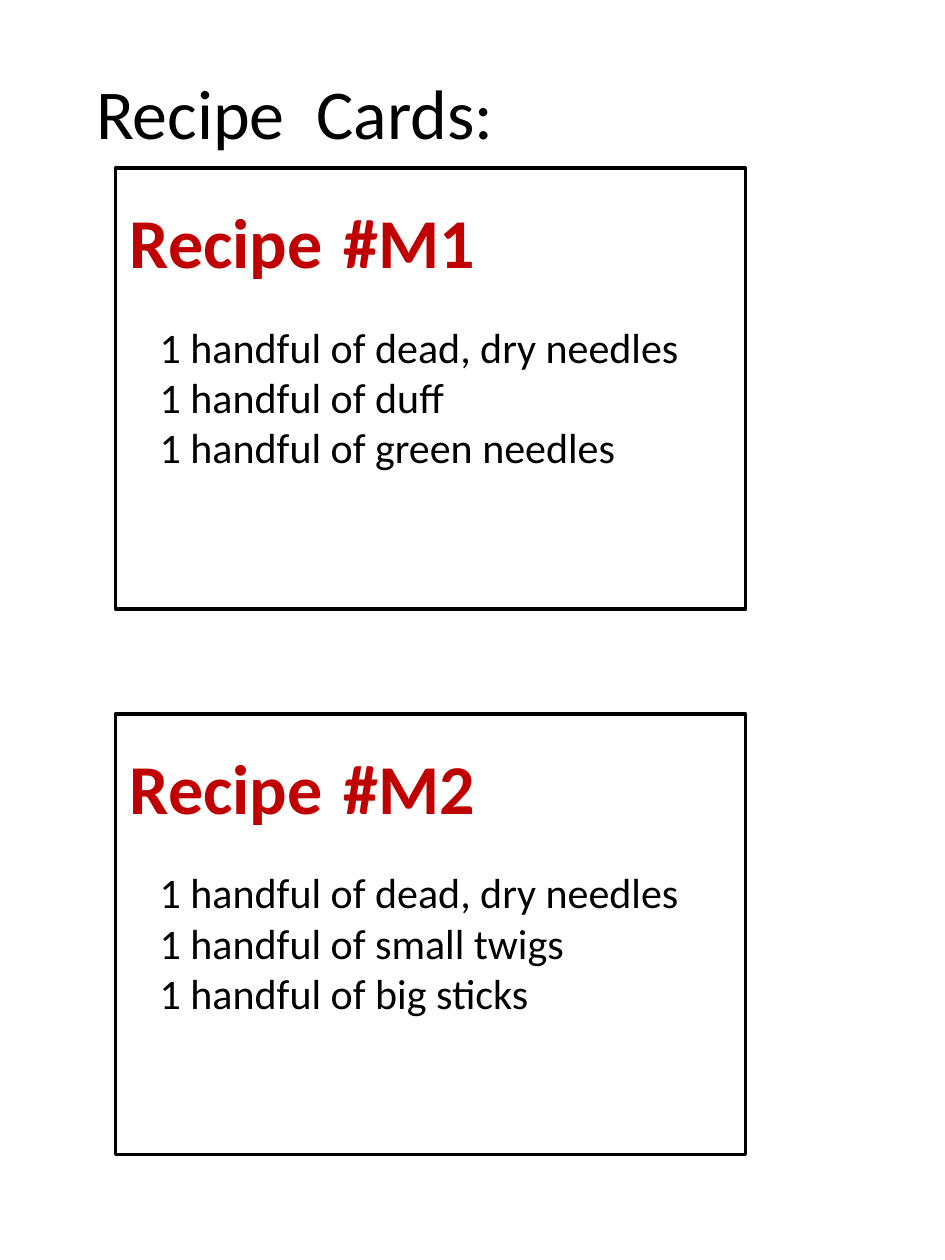
from dataclasses import dataclass

from lxml.etree import SubElement
from pptx import Presentation
from pptx.dml.color import RGBColor
from pptx.enum.shapes import MSO_SHAPE
from pptx.enum.text import MSO_AUTO_SIZE, PP_ALIGN
from pptx.oxml.ns import qn
from pptx.util import Cm, Pt


@dataclass(frozen=True)
class Theme:
    font: str = "Calibri"
    ink: str = "000000"
    heading: str = "C00000"
    heading_edge: str = "D02F2A"
    title_size: float = 40
    heading_gap_size: float = 54
    ingredient_size: float = 24
    border_width: float = 2
    edge_width: float = 1.93


THEME = Theme()
CARD_LEFT, FIRST_CARD_TOP, CARD_PITCH = 2.33, 3.39, 11
CARD_WIDTH, CARD_HEIGHT = 12.7, 8.89
RECIPES = [
    ("#M1", ["1 handful of dead, dry needles", "1 handful of duff",
             "1 handful of green needles"]),
    ("#M2", ["1 handful of dead, dry needles", "1 handful of small twigs",
             "1 handful of big sticks"]),
]


def outline_run(run, color, width):
    properties = run.font._element
    line = SubElement(properties, qn("a:ln"), w=str(Pt(width)))
    fill = SubElement(line, qn("a:solidFill"))
    SubElement(fill, qn("a:srgbClr"), val=color)
    properties.insert(0, line)


def add_text(shapes, lines, left, top, width, height, *, color=THEME.ink,
             bold=False, align=PP_ALIGN.LEFT, wrap=True, edge=None):
    box = shapes.add_textbox(Cm(left), Cm(top), Cm(width), Cm(height))
    frame = box.text_frame
    frame.word_wrap = wrap
    frame.auto_size = MSO_AUTO_SIZE.SHAPE_TO_FIT_TEXT
    for index, pieces in enumerate(lines):
        paragraph = frame.add_paragraph() if index else frame.paragraphs[0]
        paragraph.alignment = align
        for words, size in pieces:
            run = paragraph.add_run()
            run.text = words
            run.font.name = THEME.font
            run.font.size = Pt(size)
            run.font.bold = bold
            run.font.color.rgb = RGBColor.from_string(color)
            if edge:
                outline_run(run, edge, THEME.edge_width)


def add_border(shapes, left, top, width, height):
    border = shapes.add_shape(MSO_SHAPE.RECTANGLE, Cm(left), Cm(top),
                              Cm(width), Cm(height))
    border.shadow.inherit = False
    border.fill.background()
    border.line.color.rgb = RGBColor.from_string(THEME.ink)
    border.line.width = Pt(THEME.border_width)


def add_recipe_card(slide, top, number, ingredients):
    card = slide.shapes.add_group_shape().shapes
    add_text(card, [[(item, THEME.ingredient_size)] for item in ingredients],
             CARD_LEFT + 0.64, top + 2.96, 12.06, 3.33)
    heading = [("Recipe", THEME.title_size), (" ", THEME.heading_gap_size),
               (number, THEME.title_size)]
    add_text(card, [heading], CARD_LEFT, top, 7.54, 2.57, color=THEME.heading,
             bold=True, align=PP_ALIGN.CENTER, wrap=False,
             edge=THEME.heading_edge)
    add_border(card, CARD_LEFT, top, CARD_WIDTH, CARD_HEIGHT)


def main():
    deck = Presentation()
    deck.slide_width, deck.slide_height = Cm(19.05), Cm(25.4)
    slide = deck.slides.add_slide(deck.slide_layouts[6])
    for index, (number, ingredients) in enumerate(RECIPES):
        add_recipe_card(slide, FIRST_CARD_TOP + index * CARD_PITCH,
                        number, ingredients)
    add_text(slide.shapes, [[("Recipe  Cards:", THEME.title_size)]],
             1.69, 1.27, 15.45, 1.97)
    deck.save("out.pptx")


if __name__ == "__main__":
    main()
